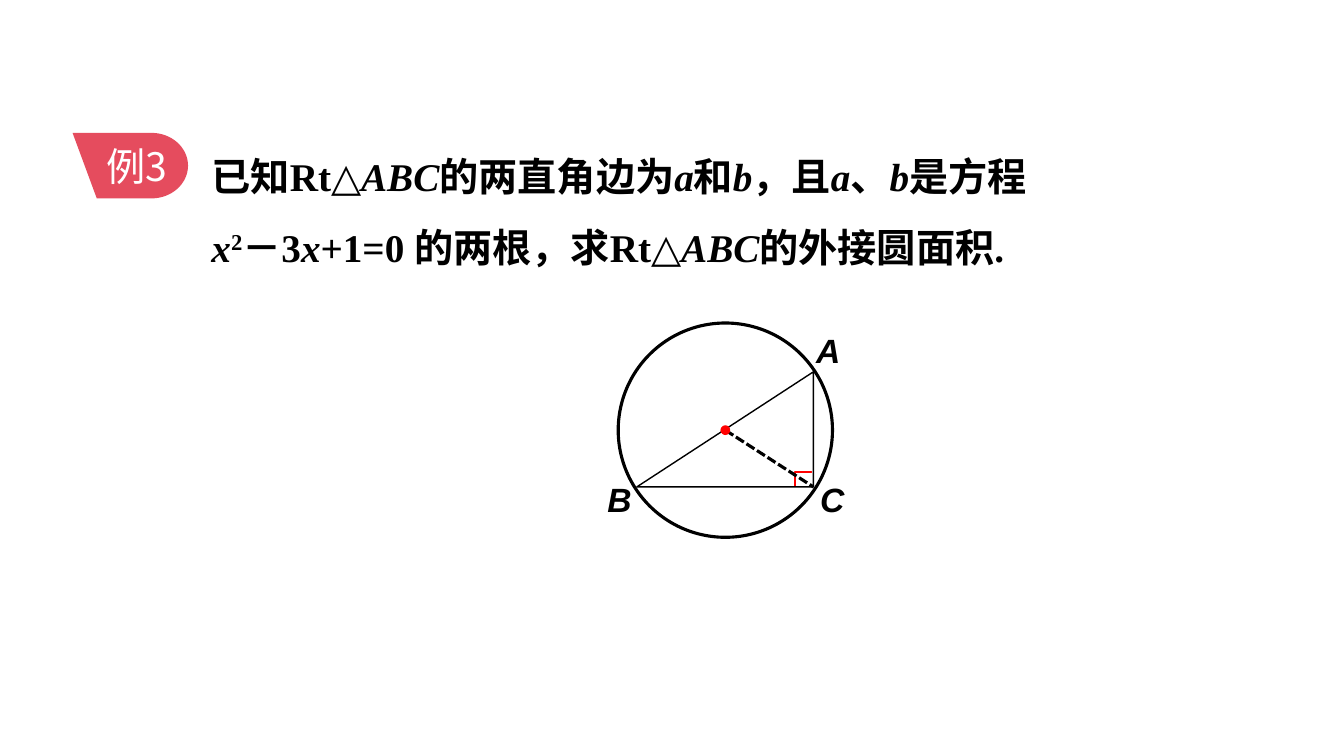
from dataclasses import dataclass
from math import cos, pi, sin

from lxml import etree
from pptx import Presentation
from pptx.dml.color import RGBColor
from pptx.enum.dml import MSO_LINE
from pptx.enum.shapes import MSO_CONNECTOR, MSO_SHAPE
from pptx.enum.text import MSO_ANCHOR, MSO_AUTO_SIZE, PP_ALIGN
from pptx.oxml.ns import qn
from pptx.util import Cm, Pt

OVAL = MSO_SHAPE.OVAL
TRIANGLE = MSO_SHAPE.ISOSCELES_TRIANGLE
CORNER = MSO_SHAPE.HALF_FRAME
STRAIGHT = MSO_CONNECTOR.STRAIGHT
DASH = MSO_LINE.SQUARE_DOT
GROW = MSO_AUTO_SIZE.SHAPE_TO_FIT_TEXT
MIDDLE = MSO_ANCHOR.MIDDLE
CENTER = PP_ALIGN.CENTER
HAN = "Noto Sans CJK SC"
BLACK, RED, WHITE = "000000", "FF0000", "FFFFFF"


@dataclass
class Figure:
    kind: MSO_SHAPE
    left: float
    top: float
    width: float
    height: float
    line: str
    weight: float
    fill: str = ""
    adjust: tuple = ()


@dataclass
class Label:
    text: str
    left: float
    top: float


@dataclass
class Part:
    text: str
    italic: bool = False
    raised: bool = False


PROBLEM = [
    [Part("已知Rt△"), Part("ABC", True), Part("的两直角边为"), Part("a", True),
     Part("和"), Part("b", True), Part("，且"), Part("a", True), Part("、"),
     Part("b", True), Part("是方程")],
    [Part("x", True), Part("2", raised=True), Part("－3"), Part("x", True),
     Part("+1=0 的两根，求Rt△"), Part("ABC", True), Part("的外接圆面积.")],
]
MID_X, MID_Y, RADIUS, DOT = 18.28, 10.84, 2.7, 0.11
RIGHT, BASE = 20.5, 12.27
FIGURES = [
    Figure(CORNER, 20.04, 11.89, 0.41, 0.36, RED, 1, "4874CB", (0, 0)),
    Figure(OVAL, MID_X - RADIUS, MID_Y - RADIUS, 2 * RADIUS, 2 * RADIUS, BLACK, 2.25),
    Figure(TRIANGLE, 16.05, 9.37, RIGHT - 16.05, BASE - 9.37, BLACK, 1, adjust=(1,)),
]
CENTRE = Figure(OVAL, MID_X - DOT, MID_Y - DOT, 2 * DOT, 2 * DOT, RED, 0.75, RED)
LABELS = [Label("A", 20.32, 8.2), Label("B", 15.06, 11.94), Label("C", 20.42, 11.94)]


def color(code: str) -> RGBColor:
    return RGBColor.from_string(code)


def style(para, face: str, size: float, code: str, bold: bool = False) -> None:
    font = para.font
    font.size, font.bold, font.name = Pt(size), bold, face
    font.color.rgb = color(code)
    base = para._p.pPr.find(qn("a:defRPr"))
    etree.SubElement(base, qn("a:ea")).set("typeface", HAN)


def inset(frame, left: float) -> None:
    frame.margin_left, frame.margin_right = Cm(left), Cm(0.33)
    frame.margin_top = frame.margin_bottom = Cm(0.18)


def draw_problem(shapes) -> None:
    frame = shapes.add_textbox(Cm(5), Cm(3.07), Cm(26.57), Cm(3.71)).text_frame
    frame.word_wrap, frame.auto_size = True, GROW
    inset(frame, 0.33)
    for row, parts in enumerate(PROBLEM):
        para = frame.add_paragraph() if row else frame.paragraphs[0]
        para.line_spacing = 1.5
        style(para, "Times New Roman", 28, BLACK, True)
        for part in parts:
            run = para.add_run()
            run.text, run.font.italic = part.text, part.italic
            if part.raised:
                run._r.get_or_add_rPr().set("baseline", "30000")


def draw_badge(shapes) -> None:
    left, top, low, turn = 1.83, 3.35, 5.0, 3.82
    half, steps = (low - top) / 2, 32
    angles = [pi * (step / steps - 0.5) for step in range(steps + 1)]
    curve = [(turn + 0.92 * cos(a), top + half + half * sin(a)) for a in angles]
    points = [(Cm(x), Cm(y)) for x, y in curve + [(2.44, low)]]
    path = shapes.build_freeform(Cm(left), Cm(top))
    path.add_line_segments(points, close=True)
    badge = path.convert_to_shape()
    badge.shadow.inherit = False
    badge.fill.solid()
    badge.fill.fore_color.rgb = color("E54C5E")
    badge.line.fill.background()
    frame = badge.text_frame
    frame.vertical_anchor = MIDDLE
    inset(frame, 0.66)
    para = frame.paragraphs[0]
    para.text, para.alignment = "例3", CENTER
    style(para, HAN, 28, WHITE)


def draw_figure(shapes, item: Figure) -> None:
    shape = shapes.add_shape(item.kind, Cm(item.left), Cm(item.top),
                             Cm(item.width), Cm(item.height))
    shape.shadow.inherit = False
    for index, value in enumerate(item.adjust):
        shape.adjustments[index] = value
    if item.fill:
        shape.fill.solid()
        shape.fill.fore_color.rgb = color(item.fill)
    else:
        shape.fill.background()
    shape.line.color.rgb = color(item.line)
    shape.line.width = Pt(item.weight)


def draw_median(shapes) -> None:
    line = shapes.add_connector(STRAIGHT, Cm(MID_X), Cm(MID_Y), Cm(RIGHT), Cm(BASE))
    line.line.color.rgb = color(BLACK)
    line.line.width, line.line.dash_style = Pt(2.25), DASH
    etree.SubElement(line._element.spPr, qn("a:effectLst"))


def draw_label(shapes, item: Label) -> None:
    box = shapes.add_textbox(Cm(item.left), Cm(item.top), Cm(1.09), Cm(1.27))
    frame = box.text_frame
    frame.word_wrap, frame.auto_size = False, GROW
    para = frame.paragraphs[0]
    para.text = item.text
    style(para, "Arial", 24, BLACK, True)
    para.font.italic = True


def main() -> None:
    deck = Presentation()
    deck.slide_width, deck.slide_height = Cm(33.87), Cm(19.05)
    shapes = deck.slides.add_slide(deck.slide_layouts[6]).shapes
    draw_problem(shapes)
    draw_badge(shapes)
    for item in FIGURES:
        draw_figure(shapes, item)
    draw_median(shapes)
    draw_figure(shapes, CENTRE)
    for item in LABELS:
        draw_label(shapes, item)
    deck.save("out.pptx")


if __name__ == "__main__":
    main()
